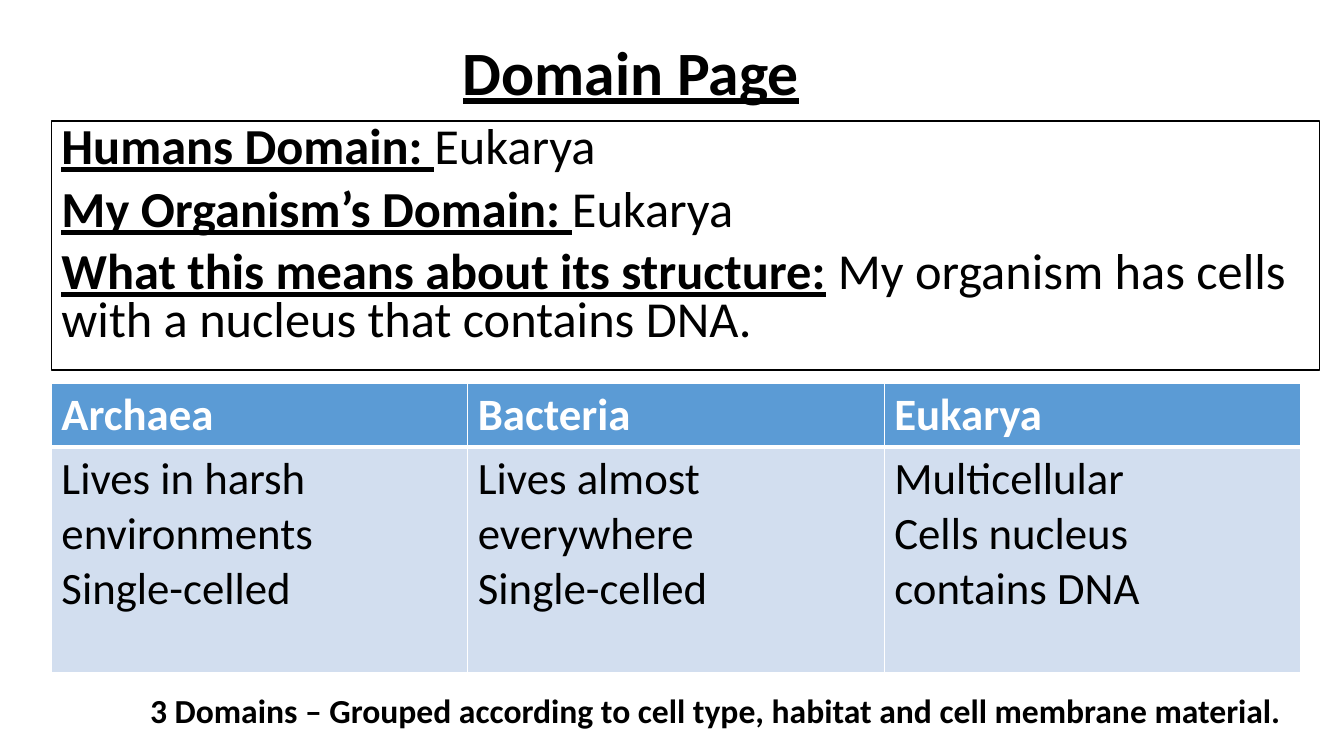
from dataclasses import dataclass

from lxml import etree
from pptx import Presentation
from pptx.dml.color import RGBColor
from pptx.enum.text import MSO_ANCHOR, MSO_AUTO_SIZE, PP_ALIGN
from pptx.oxml.ns import qn
from pptx.util import Inches, Pt

MIDDLE, TOP = MSO_ANCHOR.MIDDLE, MSO_ANCHOR.TOP
CENTER, LEFT = PP_ALIGN.CENTER, PP_ALIGN.LEFT
NO_AUTOFIT = MSO_AUTO_SIZE.NONE
BLACK = RGBColor(0x00, 0x00, 0x00)
WHITE = RGBColor(0xFF, 0xFF, 0xFF)
HEADER_BLUE = RGBColor(0x5B, 0x9B, 0xD5)
PALE_BLUE = RGBColor(0xD2, 0xDE, 0xEF)
FONT = "Calibri"


@dataclass
class Fact:
    label: str
    answer: str


@dataclass
class Domain:
    name: str
    traits: list[str]


FACTS = [
    Fact("Humans Domain: ", "Eukarya"),
    Fact("My Organism’s Domain: ", "Eukarya"),
    Fact("What this means about its structure:",
         " My organism has cells with a nucleus that contains DNA."),
]
DOMAINS = [
    Domain("Archaea", ["Lives in harsh environments", "Single-celled"]),
    Domain("Bacteria", ["Lives almost everywhere", "Single-celled"]),
    Domain("Eukarya", ["Multicellular", "Cells nucleus contains DNA"]),
]


def style(r, size: float, color: RGBColor = BLACK, bold: bool = False,
          underline: bool = False) -> None:
    r.font.name = FONT
    r.font.size = Pt(size)
    r.font.color.rgb = color
    r.font.bold = bold
    r.font.underline = underline


def place(sp, left: float, top: float, width: float, height: float) -> None:
    sp.left, sp.top = Inches(left), Inches(top)
    sp.width, sp.height = Inches(width), Inches(height)


def add_title(s) -> None:
    sp = s.shapes.title
    place(sp, 0.51, 0.02, 11.5, 1.45)
    tf = sp.text_frame
    tf.text = "Domain Page"
    tf.auto_size = NO_AUTOFIT
    tf.vertical_anchor = MIDDLE
    p = tf.paragraphs[0]
    p.alignment = CENTER
    p.line_spacing = 0.9
    style(p.runs[0], 44, bold=True, underline=True)


def add_facts(s, facts: list[Fact]) -> None:
    sp = s.placeholders[1]
    place(sp, 0.51, 1.2, 12.58, 2.47)
    sp.fill.solid()
    sp.fill.fore_color.rgb = WHITE
    sp.line.color.rgb = BLACK
    sp.line.width = Pt(1)
    tf = sp.text_frame
    tf.auto_size = NO_AUTOFIT
    tf.vertical_anchor = TOP
    for i, fact in enumerate(facts):
        p = tf.add_paragraph() if i else tf.paragraphs[0]
        p.alignment = LEFT
        p.line_spacing = 0.8
        p.space_before = Pt(10 if i else 0)
        pPr = p._p.get_or_add_pPr()
        pPr.set("marL", "0")
        pPr.set("indent", "0")
        etree.SubElement(pPr, qn("a:buNone"))
        for text, is_label in ((fact.label, True), (fact.answer, False)):
            r = p.add_run()
            r.text = text
            style(r, 36, bold=is_label, underline=is_label)


def set_borders(cell, bottom: float) -> None:
    tcPr = cell._tc.get_or_add_tcPr()
    for i, side in enumerate(("lnL", "lnR", "lnT", "lnB")):
        width = bottom if side == "lnB" else 1
        ln = etree.Element(qn(f"a:{side}"), w=str(Pt(width)))
        fill = etree.SubElement(ln, qn("a:solidFill"))
        etree.SubElement(fill, qn("a:srgbClr"), val=str(WHITE))
        tcPr.insert(i, ln)


def fill_cell(cell, lines: list[str], header: bool) -> None:
    cell.fill.solid()
    cell.fill.fore_color.rgb = HEADER_BLUE if header else PALE_BLUE
    set_borders(cell, 3 if header else 1)
    cell.text_frame.text = "\n".join(lines)
    for p in cell.text_frame.paragraphs:
        style(p.runs[0], 32, WHITE if header else BLACK, bold=header)


def add_domains(s, domains: list[Domain]) -> None:
    table = s.shapes.add_table(2, len(domains), Inches(0.51), Inches(3.8),
                               Inches(12.39), Inches(2.87)).table
    table.rows[0].height = Inches(0.63)
    table.rows[1].height = Inches(2.24)
    for col, domain in enumerate(domains):
        fill_cell(table.cell(0, col), [domain.name], True)
        fill_cell(table.cell(1, col), domain.traits, False)


def add_summary(s) -> None:
    sp = s.shapes.add_textbox(Inches(1.39), Inches(6.8), Inches(11.9), Inches(0.5))
    tf = sp.text_frame
    tf.word_wrap = True
    tf.text = ("3 Domains – Grouped according to cell type, "
               "habitat and cell membrane material.")
    style(tf.paragraphs[0].runs[0], 24, bold=True)


def main() -> None:
    prs = Presentation()
    prs.slide_width, prs.slide_height = Inches(13.33), Inches(7.5)
    s = prs.slides.add_slide(prs.slide_layouts[1])
    add_title(s)
    add_facts(s, FACTS)
    add_summary(s)
    add_domains(s, DOMAINS)
    prs.save("out.pptx")


if __name__ == "__main__":
    main()
